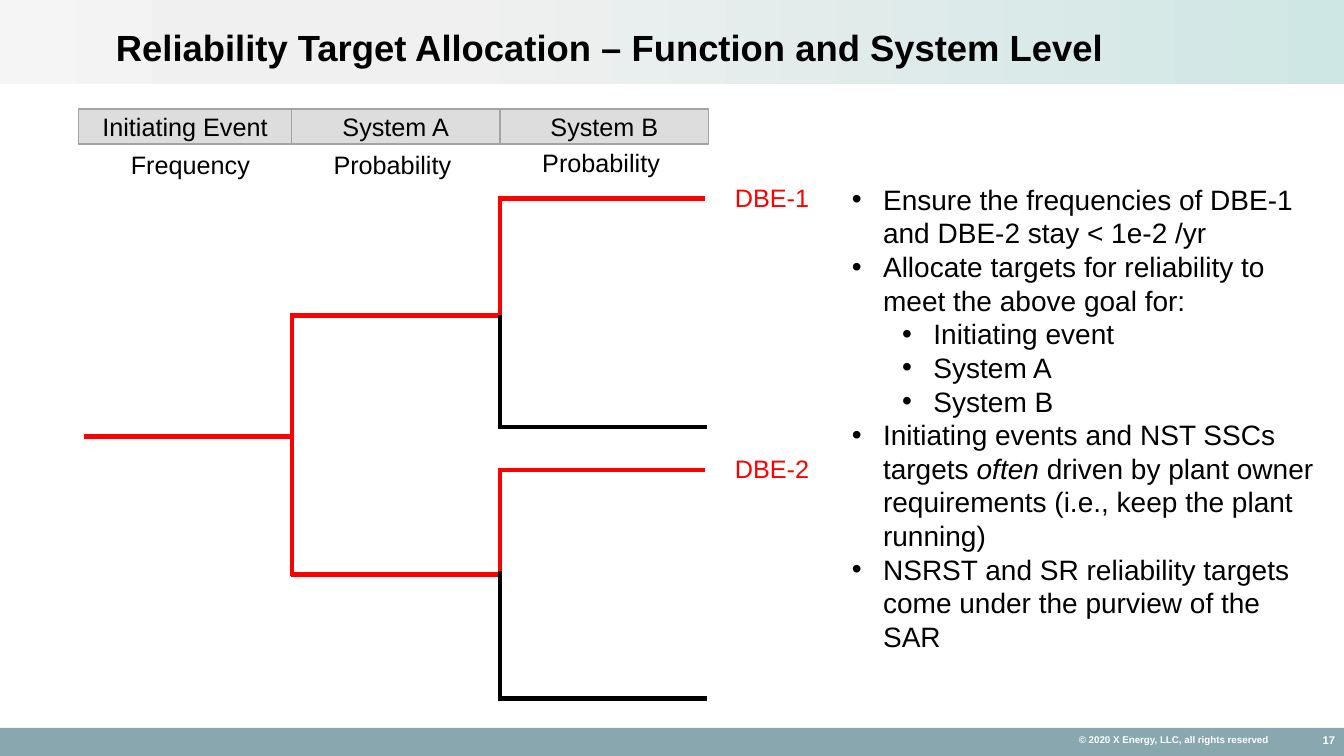
from dataclasses import dataclass

from lxml import etree
from pptx import Presentation
from pptx.dml.color import RGBColor
from pptx.enum import shapes, text
from pptx.oxml import ns
from pptx.util import Inches, Pt


@dataclass(frozen=True)
class Theme:
    face: str = "Arial"
    ink: str = "000000"
    hot: str = "FF0000"
    pale: str = "FFFFFF"
    foot: str = "89A7AF"
    cell: str = "DDDDDD"
    edge: str = "A3A3A3"
    fade: tuple = ((0, "F5F5F5"), (17, "F0F0F0"), (33, "F0F0F0"), (100, "CFE7E4"))
    head: int = 26
    body: int = 20
    label: int = 18
    page: int = 8
    fine: int = 7
    rule: int = 3


T = Theme()
ALIGN = text.PP_ALIGN
MID = text.MSO_ANCHOR.MIDDLE
GROW = text.MSO_AUTO_SIZE.SHAPE_TO_FIT_TEXT

HEADS = (
    ("Initiating Event", 0.78, 2.11),
    ("System A", 2.89, 2.07),
    ("System B", 4.96, 2.07),
)
NOTES = (
    ("Frequency", 1.2, 1.43),
    ("Probability", 3.21, 1.43),
    ("Probability", 5.28, 1.41),
)
TREE = (
    (T.hot, 0.83, 4.33, 2.89, 4.33),
    (T.hot, 2.9, 3.11, 2.9, 5.71),
    (T.hot, 2.9, 3.13, 4.96, 3.13),
    (T.hot, 2.89, 5.7, 4.94, 5.7),
)
FORKS = (("DBE-1", 1.97, 3.13), ("DBE-2", 4.66, 5.66))
GOALS = (
    (0, ("Ensure the frequencies of DBE-1 and DBE-2 stay < 1e-2 /yr",)),
    (0, ("Allocate targets for reliability to meet the above goal for:",)),
    (1, ("Initiating event",)),
    (1, ("System A",)),
    (1, ("System B",)),
    (0, ("Initiating events and NST SSCs targets ", "often",
         " driven by plant owner requirements (i.e., keep the plant running)")),
    (0, ("NSRST and SR reliability targets come under the purview of the SAR",)),
)


def apply(item, form):
    for key, val in form.items():
        setattr(item, key, val)


def style(font, size, color, bold=False):
    apply(font, {"name": T.face, "size": Pt(size), "bold": bold})
    font.color.rgb = RGBColor.from_string(color)


def write(shape, words, size, color, bold=False, **form):
    para = shape.text_frame.paragraphs[0]
    apply(para, form)
    run = para.add_run()
    run.text = words
    style(run.font, size, color, bold)


def add_rect(slide, box, fill=None, edge=None):
    rect = slide.shapes.add_shape(shapes.MSO_SHAPE.RECTANGLE, *map(Inches, box))
    rect.shadow.inherit = False
    if fill:
        rect.fill.solid()
        rect.fill.fore_color.rgb = RGBColor.from_string(fill)
    if edge:
        rect.line.color.rgb = RGBColor.from_string(edge)
        rect.line.width = Pt(1)
    else:
        rect.line.fill.background()
    return rect


def add_text(slide, box, **form):
    label = slide.shapes.add_textbox(*map(Inches, box))
    apply(label.text_frame, {"word_wrap": True, **form})
    return label


def add_line(slide, color, *ends):
    line = slide.shapes.add_connector(shapes.MSO_CONNECTOR.STRAIGHT, *map(Inches, ends))
    line.line.color.rgb = RGBColor.from_string(color)
    line.line.width = Pt(T.rule)
    etree.SubElement(line._element.spPr, ns.qn("a:effectLst"))


def add_band(slide):
    band = add_rect(slide, (0, 0, 13.33, 0.83))
    band.fill.gradient()
    band.fill.gradient_angle = 0
    stops = band._element.spPr.find(".//" + ns.qn("a:gsLst"))
    for stop in list(stops):
        stops.remove(stop)
    for spot, color in T.fade:
        stop = etree.SubElement(stops, ns.qn("a:gs"), pos=str(spot * 1000))
        etree.SubElement(stop, ns.qn("a:srgbClr"), val=color)
    slide.shapes._spTree.insert(2, band._element)


def add_title(slide):
    title = slide.shapes.title
    box = {"left": 1.05, "top": 0, "width": 12.28, "height": 0.99}
    apply(title, {key: Inches(val) for key, val in box.items()})
    apply(title.text_frame, {"vertical_anchor": MID, "word_wrap": True})
    write(title, "Reliability Target Allocation – Function and System Level",
          T.head, T.ink, True, alignment=ALIGN.LEFT, line_spacing=0.9)


def add_foot(slide):
    add_rect(slide, (0, 7.22, 13.33, 0.28), T.foot)
    claim = add_text(slide, (10.49, 7.21, 2.3, 0.25), vertical_anchor=MID)
    write(claim, "© 2020 X Energy, LLC, all rights reserved",
          T.fine, T.pale, True, alignment=ALIGN.CENTER)
    page = add_text(slide, (12.26, 7.24, 1.08, 0.2), vertical_anchor=MID)
    write(page, "17", T.page, T.pale, True, alignment=ALIGN.RIGHT)


def add_tree(slide):
    for branch in TREE:
        add_line(slide, *branch)
    for name, top, node in FORKS:
        base = top + 2.27
        add_line(slide, T.ink, 4.96, base, 7.01, base)
        add_line(slide, T.ink, 4.96, top, 4.96, base + 0.02)
        add_line(slide, T.hot, 4.94, top, 6.99, top)
        add_line(slide, T.hot, 4.96, top, 4.96, node)
        label = add_text(slide, (7.19, top - 0.21, 1.77, 0.4), auto_size=GROW)
        write(label, name, T.label, T.hot)


def add_heads(slide):
    for name, left, width in HEADS:
        cell = add_rect(slide, (left, 1.08, width, 0.35), T.cell, T.edge)
        cell.text_frame.vertical_anchor = MID
        write(cell, name, T.label, T.ink, alignment=ALIGN.CENTER)
    for name, left, top in NOTES:
        note = add_text(slide, (left, top, 1.44, 0.4), auto_size=GROW)
        write(note, name, T.label, T.ink)


def add_goals(slide):
    frame = add_text(slide, (8.35, 1.76, 4.81, 4.48), auto_size=GROW).text_frame
    for spot, (level, parts) in enumerate(GOALS):
        para = frame.add_paragraph() if spot else frame.paragraphs[0]
        para.level = level
        props = para._p.get_or_add_pPr()
        props.set("marL", str(Inches(0.31 + level * 0.5)))
        props.set("indent", str(Inches(-0.31)))
        etree.SubElement(props, ns.qn("a:buFont"), typeface=T.face)
        etree.SubElement(props, ns.qn("a:buChar"), char="•")
        for part in parts:
            run = para.add_run()
            run.text = part
            style(run.font, T.body, T.ink)
            run.font.italic = part == "often"


def main():
    deck = Presentation()
    apply(deck, {"slide_width": Inches(13.33), "slide_height": Inches(7.5)})
    slide = deck.slides.add_slide(deck.slide_layouts[5])
    add_band(slide)
    add_title(slide)
    add_foot(slide)
    add_tree(slide)
    add_goals(slide)
    add_heads(slide)
    deck.save("out.pptx")


if __name__ == "__main__":
    main()
